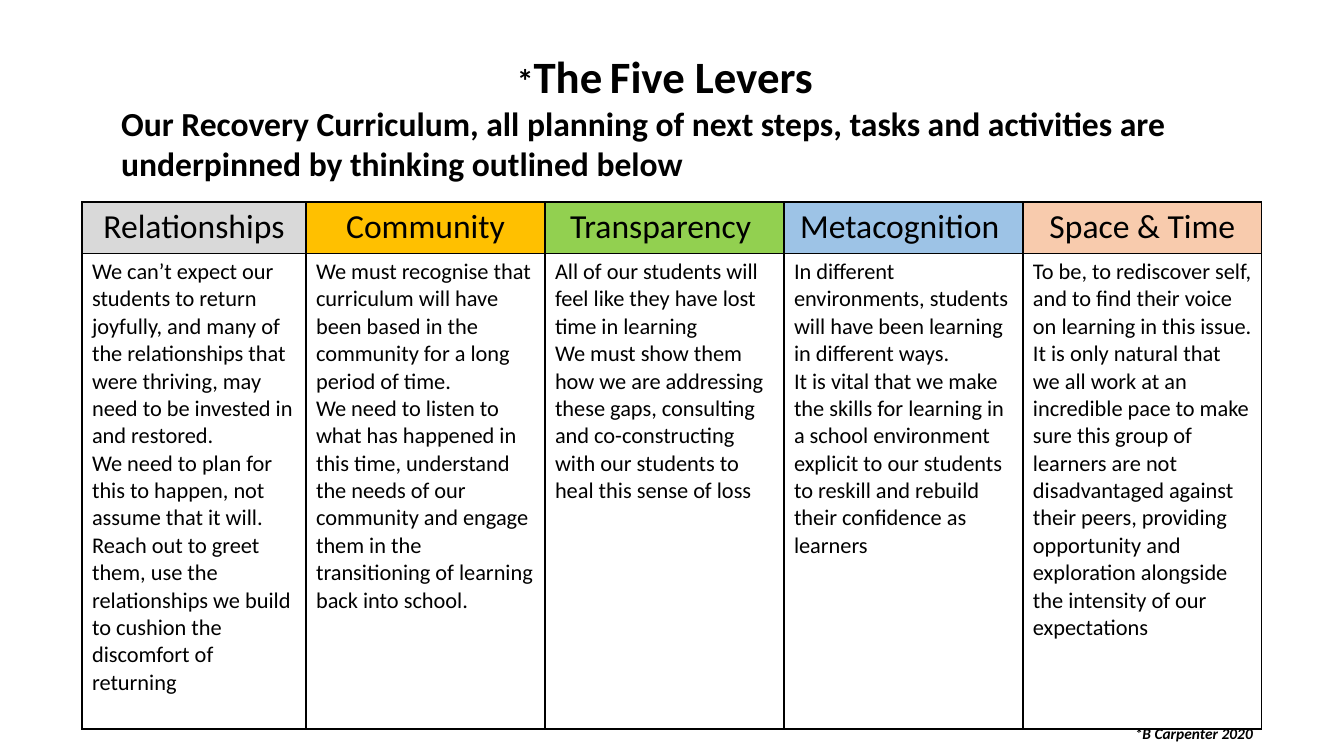
from dataclasses import dataclass

from lxml import etree
from pptx import Presentation
from pptx.dml.color import RGBColor
from pptx.enum.text import MSO_ANCHOR, MSO_AUTO_SIZE, PP_ALIGN
from pptx.oxml.ns import qn
from pptx.util import Emu, Pt

LEFT, CENTER, RIGHT = PP_ALIGN.LEFT, PP_ALIGN.CENTER, PP_ALIGN.RIGHT
TOP = MSO_ANCHOR.TOP
NO_AUTOFIT = MSO_AUTO_SIZE.NONE
PX_PER_INCH = 100.8


@dataclass(frozen=True)
class Theme:
    font: str = "Calibri"
    ink: str = "000000"
    title: int = 32
    heading: int = 24
    body: int = 16
    credit: int = 11
    border: int = 1


THEME = Theme()

# Each lever: heading, heading fill, paragraphs
LEVERS = [
    ("Relationships", "D9D9D9", [
        "We can’t expect our students to return joyfully, and many of the relationships "
        "that were thriving, may need to be invested in and restored.",
        "We need to plan for this to happen, not assume that it will.",
        "Reach out to greet them, use the relationships we build to cushion the "
        "discomfort of returning",
    ]),
    ("Community", "FFC000", [
        "We must recognise that curriculum will have been based in the community for a "
        "long period of time.",
        "We need to listen to what has happened in this time, understand the needs of our "
        "community and engage them in the transitioning of learning back into school.",
    ]),
    ("Transparency ", "92D050", [
        "All of our students will feel like they have lost time in learning",
        "We must show them how we are addressing these gaps, consulting and "
        "co-constructing with our students to heal this sense of loss",
    ]),
    ("Metacognition ", "9DC3E6", [
        "In different environments, students will have been learning in different ways.",
        "It is vital that we make the skills for learning in a school environment explicit "
        "to our students to reskill and rebuild their confidence as learners",
    ]),
    ("Space & Time", "F8CBAD", [
        "To be, to rediscover self, and to find their voice on learning in this issue.",
        "It is only natural that we all work at an incredible pace to make sure this group "
        "of learners are not disadvantaged against their peers, providing opportunity and "
        "exploration alongside the intensity of our expectations",
    ]),
]


def px(length):
    return Emu(round(length * 914400 / PX_PER_INCH))


def add_text(paragraph, text, *, size, bold=False, italic=False, align=LEFT):
    paragraph.alignment = align
    run = paragraph.add_run()
    run.text = text
    font = run.font
    font.name, font.size = THEME.font, Pt(size)
    font.bold, font.italic = bold, italic
    font.color.rgb = RGBColor.from_string(THEME.ink)


def add_borders(cell):
    properties = cell._tc.get_or_add_tcPr()
    for position, side in enumerate(("lnL", "lnR", "lnT", "lnB")):
        line = etree.Element(qn(f"a:{side}"), w=str(Pt(THEME.border)))
        fill = etree.SubElement(line, qn("a:solidFill"))
        etree.SubElement(fill, qn("a:srgbClr"), val=THEME.ink)
        properties.insert(position, line)


def fill_cell(cell, paragraphs, *, color=None, **text_format):
    if color:
        cell.fill.solid()
        cell.fill.fore_color.rgb = RGBColor.from_string(color)
    else:
        cell.fill.background()
    add_borders(cell)
    frame = cell.text_frame
    for index, text in enumerate(paragraphs):
        paragraph = frame.add_paragraph() if index else frame.paragraphs[0]
        add_text(paragraph, text, **text_format)


def add_levers_table(slide, left, top, widths, heights):
    table = slide.shapes.add_table(
        len(heights), len(widths), px(left), px(top), px(sum(widths)), px(sum(heights))
    ).table
    table.first_row = table.horz_banding = False
    for row, height in zip(table.rows, heights):
        row.height = px(height)
    for index, (heading, color, paragraphs) in enumerate(LEVERS):
        table.columns[index].width = px(widths[index])
        fill_cell(table.cell(0, index), [heading], color=color,
                  size=THEME.heading, align=CENTER)
        fill_cell(table.cell(1, index), paragraphs, size=THEME.body)


def format_title(title, left, top, width, height):
    title.left, title.top = px(left), px(top)
    title.width, title.height = px(width), px(height)
    frame = title.text_frame
    frame.word_wrap, frame.auto_size, frame.vertical_anchor = True, NO_AUTOFIT, TOP
    for text, size in (("*", THEME.heading), ("The", THEME.title),
                       (" ", THEME.heading), ("Five Levers", THEME.title)):
        add_text(frame.paragraphs[0], text, size=size, bold=True, align=CENTER)
    add_text(frame.add_paragraph(),
             "Our Recovery Curriculum, all planning of next steps, tasks and activities "
             "are underpinned by thinking outlined below",
             size=THEME.heading, bold=True)


def add_credit(slide, left, top, width, height):
    credit = slide.shapes.add_textbox(px(left), px(top), px(width), px(height))
    credit.text_frame.word_wrap = True
    add_text(credit.text_frame.paragraphs[0], "*B Carpenter 2020",
             size=THEME.credit, bold=True, italic=True, align=RIGHT)


def main():
    deck = Presentation()
    deck.slide_width, deck.slide_height = px(1344), px(756)
    title_only = deck.slide_layouts[5]
    slide = deck.slides.add_slide(title_only)

    # Heading and introduction
    format_title(slide.shapes.title, 111, 44, 1108, 146)
    # Five levers, one per column
    add_levers_table(slide, 82, 202, [224] + [239] * 4, [50, 476])
    # Source credit
    add_credit(slide, 873, 719, 390, 61)

    deck.save("out.pptx")


if __name__ == "__main__":
    main()
